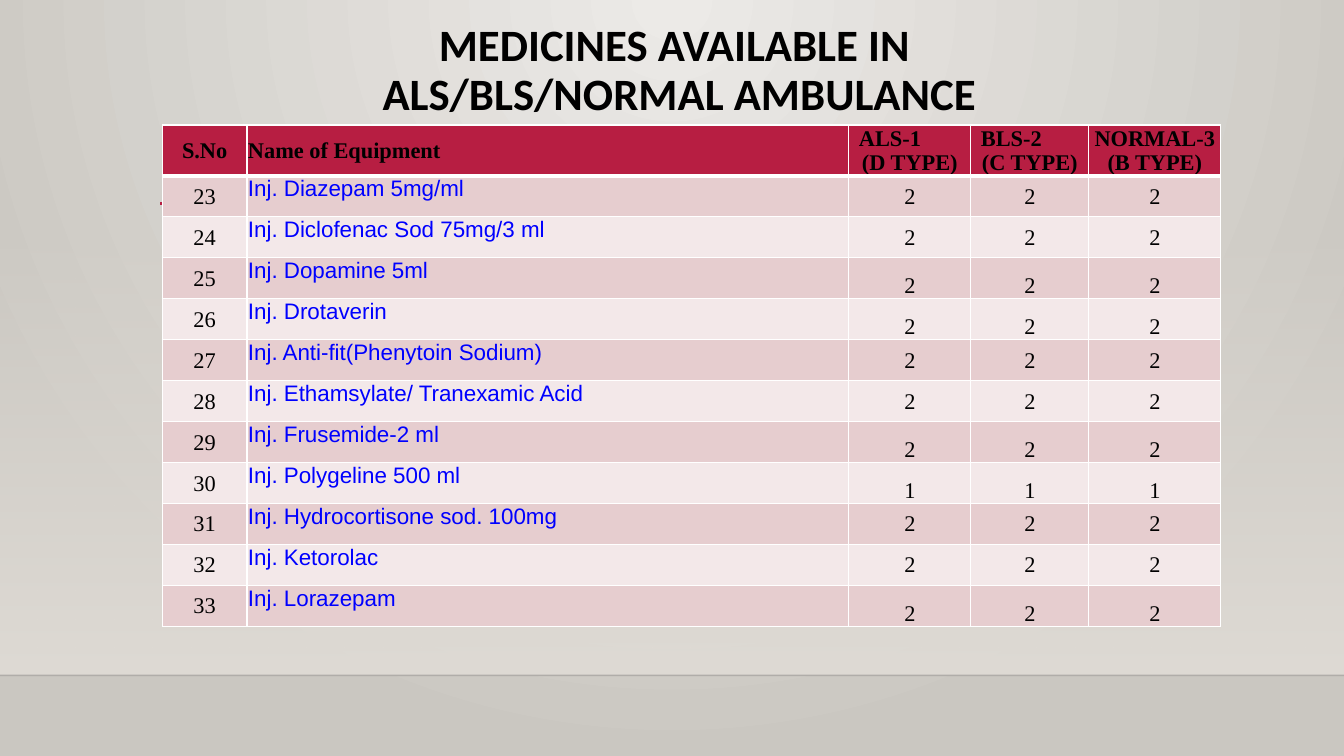
from pptx import Presentation
from pptx.dml.color import RGBColor
from pptx.enum.shapes import MSO_CONNECTOR as LINK, MSO_SHAPE as SHAPE
from pptx.enum.text import MSO_ANCHOR as ANCHOR, PP_ALIGN as ALIGN
from pptx.oxml import parse_xml
from pptx.oxml.ns import nsdecls, qn
from pptx.util import Inches, Pt

WIDE, HIGH = 13.33, 7.5
FLOOR = 6.7
COLS = [0.84, 5.97, 1.21, 1.17, 1.31]
HEAD, BODY = 0.5, 4.47
SERIF = "Times New Roman"
HEADS = ["S.No", "Name of Equipment", "ALS-1\n(D TYPE)",
         "BLS-2\n(C TYPE)", "NORMAL-3\n(B TYPE)"]
FIRST = 23
DRUGS = [
    ("Inj. Diazepam 5mg/ml", 2, ANCHOR.MIDDLE),
    ("Inj. Diclofenac Sod 75mg/3 ml", 2, ANCHOR.MIDDLE),
    ("Inj. Dopamine 5ml", 2, ANCHOR.BOTTOM),
    ("Inj. Drotaverin", 2, ANCHOR.BOTTOM),
    ("Inj. Anti-fit(Phenytoin Sodium)", 2, ANCHOR.MIDDLE),
    ("Inj. Ethamsylate/ Tranexamic Acid", 2, ANCHOR.MIDDLE),
    ("Inj. Frusemide-2 ml", 2, ANCHOR.BOTTOM),
    ("Inj. Polygeline 500 ml", 1, ANCHOR.BOTTOM),
    ("Inj. Hydrocortisone sod. 100mg", 2, ANCHOR.MIDDLE),
    ("Inj. Ketorolac", 2, ANCHOR.MIDDLE),
    ("Inj. Lorazepam", 2, ANCHOR.BOTTOM),
]


def rgb(code):
    """Turn a hex string into a colour."""
    return RGBColor.from_string(code)


def blend(fill, root, start, end, shade, alpha=100):
    """Give a fill two gradient stops and a direction."""
    fill.gradient()
    old = root.find(".//" + qn("a:gradFill"))
    new = parse_xml(
        f'<a:gradFill {nsdecls("a")} rotWithShape="1"><a:gsLst>'
        f'<a:gs pos="0"><a:srgbClr val="{start}"><a:alpha val="{alpha * 1000}"/></a:srgbClr></a:gs>'
        f'<a:gs pos="100000"><a:srgbClr val="{end}"/></a:gs>'
        f'</a:gsLst>{shade}</a:gradFill>')
    old.getparent().replace(old, new)


def rule(slide, left, right, top, color, width, alpha=100):
    """Draw a level line."""
    line = slide.shapes.add_connector(
        LINK.STRAIGHT, Inches(left), Inches(top), Inches(right), Inches(top))
    line.line.color.rgb = rgb(color)
    line.line.width = Pt(width)
    props = line._element.spPr
    tint = props.find(".//" + qn("a:srgbClr"))
    tint.append(parse_xml(f'<a:alpha {nsdecls("a")} val="{alpha * 1000}"/>'))
    props.append(parse_xml(f'<a:effectLst {nsdecls("a")}/>'))


def scene(slide):
    """Paint the wall, the floor edge and the accent line."""
    blend(slide.background.fill, slide.element, "ECEAE7", "CAC7C1",
          '<a:path path="circle"><a:fillToRect l="43000" r="43000" b="100000"/></a:path>')
    wall = slide.shapes.add_shape(
        SHAPE.RECTANGLE, 0, Inches(2.21), Inches(WIDE), Inches(FLOOR - 2.21))
    wall.shadow.inherit = False
    wall.line.fill.background()
    blend(wall.fill, wall._element, "DFDBD5", "DFDBD5",
          '<a:lin ang="5400000" scaled="0"/>', 0)
    rule(slide, 0, WIDE, FLOOR, "000001", 1, 20)
    rule(slide, 1.59, 12.1, 2.02, "B71E42", 2.5)


def style(para, size, face, color, bold, align):
    """Format a paragraph and its runs."""
    para.alignment = align
    for run in para.runs:
        font = run.font
        font.size, font.name, font.bold = Pt(size), face, bold
        font.color.rgb = rgb(color)


def title(slide, text):
    """Place and format the title."""
    box = slide.shapes.title
    box.left, box.top, box.width, box.height = map(Inches, (1.49, 0.18, 10.5, 1.15))
    frame = box.text_frame
    frame.text = text
    frame.vertical_anchor = ANCHOR.TOP
    para = frame.paragraphs[0]
    para.line_spacing = 0.9
    style(para, 32, "Calibri", "000000", True, ALIGN.CENTER)


def edges(cell, base):
    """Draw white borders, with the given width at the base."""
    props = cell._tc.get_or_add_tcPr()
    widths = {"lnL": 1, "lnR": 1, "lnT": 1, "lnB": base}
    for spot, (tag, width) in enumerate(widths.items()):
        props.insert(spot, parse_xml(
            f'<a:{tag} {nsdecls("a")} w="{Pt(width)}"><a:solidFill>'
            f'<a:srgbClr val="FFFFFF"/></a:solidFill></a:{tag}>'))


def put(cell, text, fill, anchor, align=ALIGN.CENTER, face=SERIF,
        color="000000", bold=False, base=1):
    """Fill and format one table cell."""
    cell.text_frame.text = text
    cell.vertical_anchor = anchor
    cell.margin_left = cell.margin_right = cell.margin_top = Inches(0.01)
    cell.margin_bottom = 0
    cell.fill.solid()
    cell.fill.fore_color.rgb = rgb(fill)
    edges(cell, base)
    for para in cell.text_frame.paragraphs:
        style(para, 16, face, color, bold, align)


def header(table):
    """Write the header row."""
    for col, text in enumerate(HEADS):
        cell = table.cell(0, col)
        put(cell, text, "B71E42", ANCHOR.BOTTOM if col == 4 else ANCHOR.MIDDLE,
            ALIGN.LEFT if col == 1 else ALIGN.CENTER, bold=True, base=3)
        if col in (2, 3):
            para = cell.text_frame.paragraphs[0]
            para.alignment = ALIGN.LEFT
            para._p.get_or_add_pPr().set("marL", str(Inches(0.09)))


def stock(slide):
    """Build the table of medicines."""
    table = slide.shapes.add_table(
        len(DRUGS) + 1, len(COLS), Inches(1.61), Inches(1.24),
        Inches(sum(COLS)), Inches(HEAD + BODY)).table
    for col, width in zip(table.columns, COLS):
        col.width = Inches(width)
    for row in table.rows:
        row.height = Inches(BODY / len(DRUGS))
    table.rows[0].height = Inches(HEAD)
    header(table)
    for row, (name, count, anchor) in enumerate(DRUGS, 1):
        fill = "E6CDCF" if row % 2 else "F3E8E9"
        put(table.cell(row, 0), str(FIRST + row - 1), fill, ANCHOR.MIDDLE)
        put(table.cell(row, 1), name, fill, ANCHOR.TOP, ALIGN.LEFT, "Arial", "0000FF")
        for col in range(2, len(COLS)):
            put(table.cell(row, col), str(count), fill, anchor)


def main():
    """Build and save the slide."""
    deck = Presentation()
    deck.slide_width, deck.slide_height = Inches(WIDE), Inches(HIGH)
    slide = deck.slides.add_slide(deck.slide_layouts[5])
    scene(slide)
    title(slide, "MEDICINES AVAILABLE IN \vALS/BLS/NORMAL AMBULANCE")
    stock(slide)
    deck.save("out.pptx")


if __name__ == "__main__":
    main()
